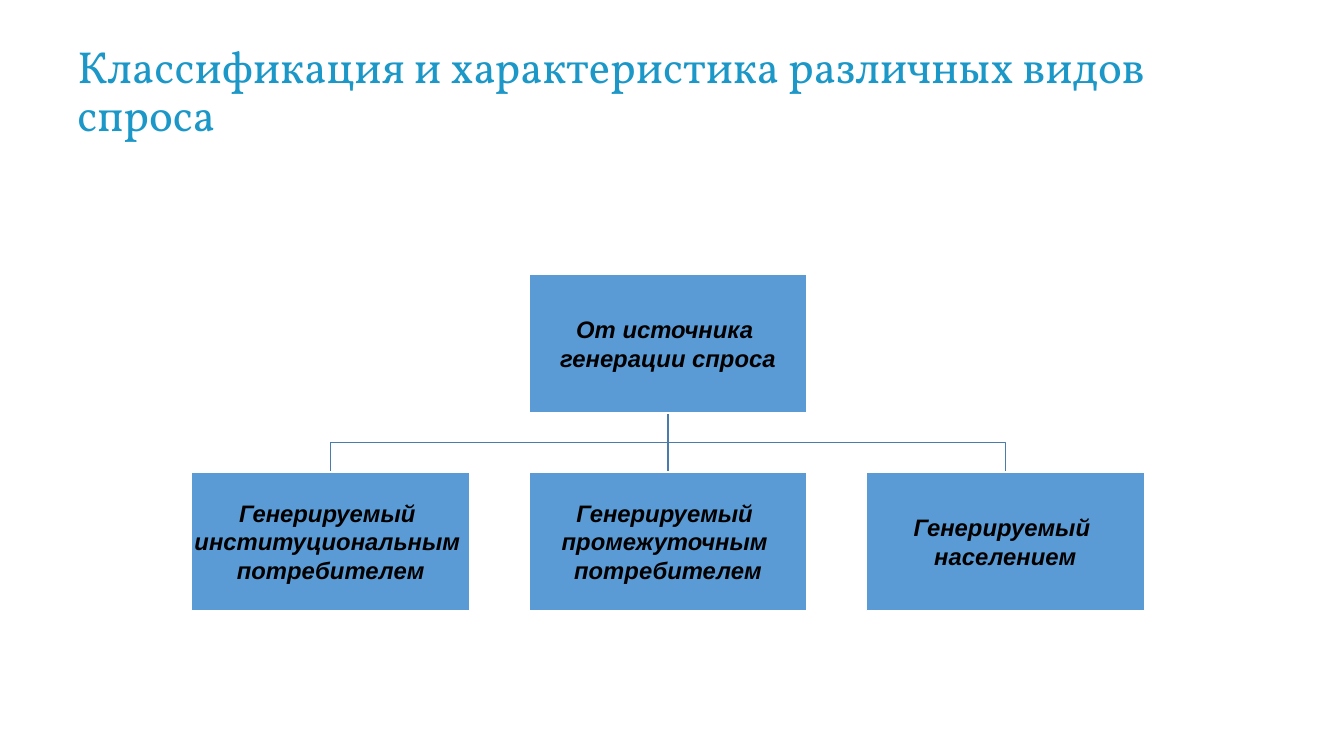
from dataclasses import dataclass

from lxml import etree
from pptx import Presentation
from pptx.dml.color import RGBColor
from pptx.enum.shapes import MSO_CONNECTOR, MSO_SHAPE
from pptx.enum.text import MSO_ANCHOR, PP_ALIGN
from pptx.oxml.ns import qn
from pptx.util import Cm, Pt

RECTANGLE = MSO_SHAPE.RECTANGLE
STRAIGHT = MSO_CONNECTOR.STRAIGHT
MIDDLE = MSO_ANCHOR.MIDDLE
CENTER = PP_ALIGN.CENTER


@dataclass(frozen=True)
class Theme:
    """Colours, fonts and type sizes of the slide."""
    title_color: RGBColor = RGBColor(0x1B, 0x97, 0xC8)
    box_fill: RGBColor = RGBColor(0x5B, 0x9B, 0xD5)
    box_line: RGBColor = RGBColor(0xFF, 0xFF, 0xFF)
    box_text: RGBColor = RGBColor(0, 0, 0)
    branch: RGBColor = RGBColor(0x49, 0x7C, 0xAB)
    title_font: str = "Vollkorn"
    box_font: str = "Arial"
    title_size: Pt = Pt(32)
    box_size: Pt = Pt(17)
    line_width: Pt = Pt(1)


THEME = Theme()
BOX_WIDTH, BOX_HEIGHT = Cm(7.01), Cm(3.5)
FIRST_LEFT, COLUMN_STEP = Cm(4.83), Cm(8.5)
ROOT_TOP, CHILD_TOP = Cm(6.91), Cm(11.89)
ROOT_COLUMN = 1

TITLE = "Классификация и характеристика различных видов спроса"
ROOT_LINES = ["От источника ", "генерации спроса"]
CHILDREN = [
    ["Генерируемый ", "институциональным ", "потребителем"],
    ["Генерируемый ", "промежуточным ", "потребителем"],
    ["Генерируемый ", "населением"],
]


def column_left(column):
    """Return the left edge of a column of boxes."""
    return FIRST_LEFT + column * COLUMN_STEP


def column_center(column):
    """Return the middle of a column of boxes."""
    return column_left(column) + BOX_WIDTH // 2


def add_span(para, text, font_name, size, color):
    """Add one styled run to a paragraph and return it."""
    span = para.add_run()
    span.text = text
    span.font.name = font_name
    span.font.size = size
    span.font.color.rgb = color
    return span


def add_title(page, text):
    """Add the heading of the slide."""
    box = page.shapes.add_textbox(Cm(1.7), Cm(0.76), Cm(30.48), Cm(3.18))
    frame = box.text_frame
    frame.word_wrap = True
    frame.vertical_anchor = MIDDLE
    para = frame.paragraphs[0]
    para.line_spacing = 0.9
    add_span(para, text, THEME.title_font, THEME.title_size, THEME.title_color)


def style_branch(line):
    """Give a branch its colour and width."""
    line.color.rgb = THEME.branch
    line.width = THEME.line_width


def add_stem(page, column):
    """Draw the straight branch down to the child below the root."""
    center = column_center(column)
    stem = page.shapes.add_connector(
        STRAIGHT, center, ROOT_TOP + BOX_HEIGHT, center, CHILD_TOP)
    style_branch(stem.line)
    etree.SubElement(stem._element.spPr, qn("a:effectLst"))


def add_elbow(page, column):
    """Draw the bent branch from the root to a child at its side."""
    start, end = column_center(ROOT_COLUMN), column_center(column)
    top = ROOT_TOP + BOX_HEIGHT
    middle = (top + CHILD_TOP) // 2
    builder = page.shapes.build_freeform(start, top)
    builder.add_line_segments(
        [(start, middle), (end, middle), (end, CHILD_TOP)], close=False)
    elbow = builder.convert_to_shape()
    elbow.shadow.inherit = False
    elbow.fill.background()
    style_branch(elbow.line)


def add_box(page, column, top, lines):
    """Add a filled box with one centred paragraph for each line."""
    box = page.shapes.add_shape(
        RECTANGLE, column_left(column), top, BOX_WIDTH, BOX_HEIGHT)
    box.shadow.inherit = False
    box.fill.solid()
    box.fill.fore_color.rgb = THEME.box_fill
    box.line.color.rgb = THEME.box_line
    box.line.width = THEME.line_width
    frame = box.text_frame
    frame.word_wrap = True
    frame.vertical_anchor = MIDDLE
    frame.margin_left = frame.margin_right = Cm(0.03)
    frame.margin_top = frame.margin_bottom = Cm(0.03)
    for index, text in enumerate(lines):
        para = frame.add_paragraph() if index else frame.paragraphs[0]
        para.alignment = CENTER
        span = add_span(
            para, text, THEME.box_font, THEME.box_size, THEME.box_text)
        span.font.bold = True
        span.font.italic = True


def main():
    """Build the slide and save the deck."""
    deck = Presentation()
    deck.slide_width, deck.slide_height = Cm(33.87), Cm(19.05)
    page = deck.slides.add_slide(deck.slide_layouts[6])
    add_title(page, TITLE)
    for column in range(len(CHILDREN)):
        if column == ROOT_COLUMN:
            add_stem(page, column)
        else:
            add_elbow(page, column)
    add_box(page, ROOT_COLUMN, ROOT_TOP, ROOT_LINES)
    for column, lines in enumerate(CHILDREN):
        add_box(page, column, CHILD_TOP, lines)
    deck.save("out.pptx")


if __name__ == "__main__":
    main()
